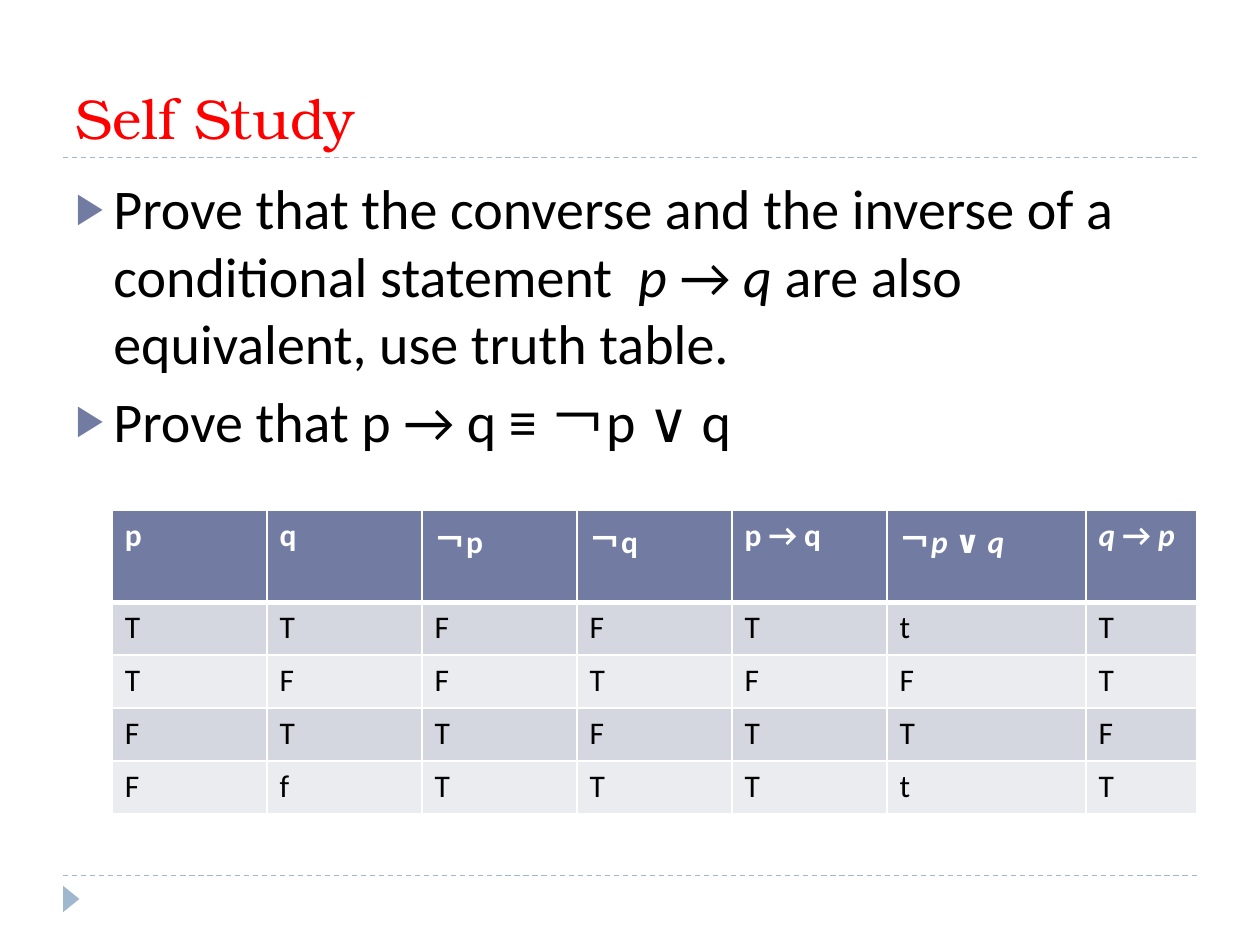
from dataclasses import dataclass

from lxml import etree
from pptx import Presentation
from pptx.dml.color import RGBColor
from pptx.enum.dml import MSO_LINE
from pptx.enum.shapes import MSO_CONNECTOR, MSO_SHAPE
from pptx.enum.text import MSO_ANCHOR, MSO_AUTO_SIZE, PP_ALIGN
from pptx.oxml.ns import qn
from pptx.util import Inches, Pt

DASH = MSO_LINE.DASH
STRAIGHT = MSO_CONNECTOR.STRAIGHT
TRIANGLE = MSO_SHAPE.ISOSCELES_TRIANGLE
BOTTOM, TOP = MSO_ANCHOR.BOTTOM, MSO_ANCHOR.TOP
NO_AUTOFIT = MSO_AUTO_SIZE.NONE
LEFT = PP_ALIGN.LEFT
TITLE_AND_CONTENT = 1


@dataclass(frozen=True)
class Theme:
    title_font: str = "TeX Gyre Bonum"
    body_font: str = "Calibri"
    title_color: str = "FF0000"
    text_color: str = "000000"
    accent: str = "727CA3"
    rule_color: str = "9FB8CD"
    white: str = "FFFFFF"
    bands: tuple = ("D5D7E0", "EBECF0")
    large_size: int = 32
    table_size: int = 18


class SlideBuilder:
    def __init__(self, presentation, theme):
        self.theme = theme
        layout = presentation.slide_layouts[TITLE_AND_CONTENT]
        self.slide = presentation.slides.add_slide(layout)

    def place(self, shape, left, top, width, height):
        shape.left, shape.top = Inches(left), Inches(top)
        shape.width, shape.height = Inches(width), Inches(height)

    def add_text(self, paragraph, marked_text, size, color, font=None, bold=False):
        """Fill a paragraph; text between asterisks becomes italic."""
        paragraph.alignment = LEFT
        for index, part in enumerate(marked_text.split("*")):
            if not part:
                continue
            run = paragraph.add_run()
            run.text = part
            run.font.name = font or self.theme.body_font
            run.font.size = Pt(size)
            run.font.bold = bold
            run.font.italic = index % 2 == 1
            run.font.color.rgb = RGBColor.from_string(color)

    def title(self, text, *box):
        shape = self.slide.shapes.title
        self.place(shape, *box)
        frame = shape.text_frame
        frame.auto_size = NO_AUTOFIT
        frame.vertical_anchor = BOTTOM
        self.add_text(frame.paragraphs[0], text, self.theme.large_size,
                      self.theme.title_color, self.theme.title_font)

    def bullets(self, items, *box):
        shape = self.slide.placeholders[1]
        self.place(shape, *box)
        frame = shape.text_frame
        frame.auto_size = NO_AUTOFIT
        frame.vertical_anchor = TOP
        for index, item in enumerate(items):
            paragraph = frame.add_paragraph() if index else frame.paragraphs[0]
            self.add_text(paragraph, item, self.theme.large_size, self.theme.text_color)
            paragraph.space_before = Pt(6)
            self.add_bullet(paragraph)

    def add_bullet(self, paragraph):
        properties = paragraph._p.get_or_add_pPr()
        properties.set("marL", str(Inches(0.3)))
        properties.set("indent", str(Inches(-0.3)))
        color = etree.SubElement(properties, qn("a:buClr"))
        etree.SubElement(color, qn("a:srgbClr"), val=self.theme.accent)
        etree.SubElement(properties, qn("a:buSzPct"), val="76000")
        etree.SubElement(properties, qn("a:buChar"), char="▶")

    def dashed_rule(self, left, right, y):
        line = self.slide.shapes.add_connector(
            STRAIGHT, Inches(left), Inches(y), Inches(right), Inches(y))
        line.line.color.rgb = RGBColor.from_string(self.theme.rule_color)
        line.line.width = Pt(0.75)
        line.line.dash_style = DASH
        etree.SubElement(line._element.spPr, qn("a:effectLst"))

    def page_marker(self, left, top, width, height):
        marker = self.slide.shapes.add_shape(
            TRIANGLE, Inches(left), Inches(top), Inches(width), Inches(height))
        marker.rotation = 90
        marker.shadow.inherit = False
        marker.fill.solid()
        marker.fill.fore_color.rgb = RGBColor.from_string(self.theme.rule_color)
        marker.line.fill.background()

    def table(self, rows, left, top, column_widths, row_heights):
        """Draw a table whose first row is the header."""
        theme = self.theme
        table = self.slide.shapes.add_table(
            len(rows), len(column_widths), Inches(left), Inches(top),
            Inches(sum(column_widths)), Inches(sum(row_heights))).table
        for column, width in zip(table.columns, column_widths):
            column.width = Inches(width)
        for row, height in zip(table.rows, row_heights):
            row.height = Inches(height)
        for row_index, texts in enumerate(rows):
            header = row_index == 0
            fill = theme.accent if header else theme.bands[(row_index - 1) % 2]
            color = theme.white if header else theme.text_color
            for column_index, text in enumerate(texts):
                cell = table.cell(row_index, column_index)
                self.add_text(cell.text_frame.paragraphs[0], text,
                              theme.table_size, color, bold=header)
                self.cell_borders(cell, top=3 if row_index == 1 else 1,
                                  bottom=3 if header else 1)
                cell.fill.solid()
                cell.fill.fore_color.rgb = RGBColor.from_string(fill)

    def cell_borders(self, cell, top, bottom):
        properties = cell._tc.get_or_add_tcPr()
        for side, width in (("L", 1), ("R", 1), ("T", top), ("B", bottom)):
            border = etree.SubElement(properties, qn(f"a:ln{side}"), w=str(Pt(width)))
            fill = etree.SubElement(border, qn("a:solidFill"))
            etree.SubElement(fill, qn("a:srgbClr"), val=self.theme.white)


def main():
    presentation = Presentation()
    presentation.slide_width, presentation.slide_height = Inches(10), Inches(7.5)
    builder = SlideBuilder(presentation, Theme())

    for y in (6.95, 1.25):
        builder.dashed_rule(0.5, 9.5, y)
    builder.page_marker(0.46, 7.07, 0.21, 0.13)
    builder.title("Self Study", 0.5, 0.17, 9, 1.08)
    builder.bullets([
        "Prove that the converse and the inverse of a conditional statement  "
        "*p *→ *q *are also equivalent, use truth table.",
        "Prove that p → q ≡ ￢p ∨ q",
    ], 0.5, 1.33, 9, 5.4)

    headings = ["p", "q", "￢p", "￢q", "p → q", "￢*p *∨* q*", "*q *→ *p*"]
    truth_values = ["TTFFTtT", "TFFTFFT", "FTTFTTF", "FfTTTtT"]
    builder.table([headings, *truth_values], 0.89, 4.05,
                  [1.23] * 5 + [1.58, 0.88], [0.73] + [0.42] * 4)

    presentation.save("out.pptx")


if __name__ == "__main__":
    main()
